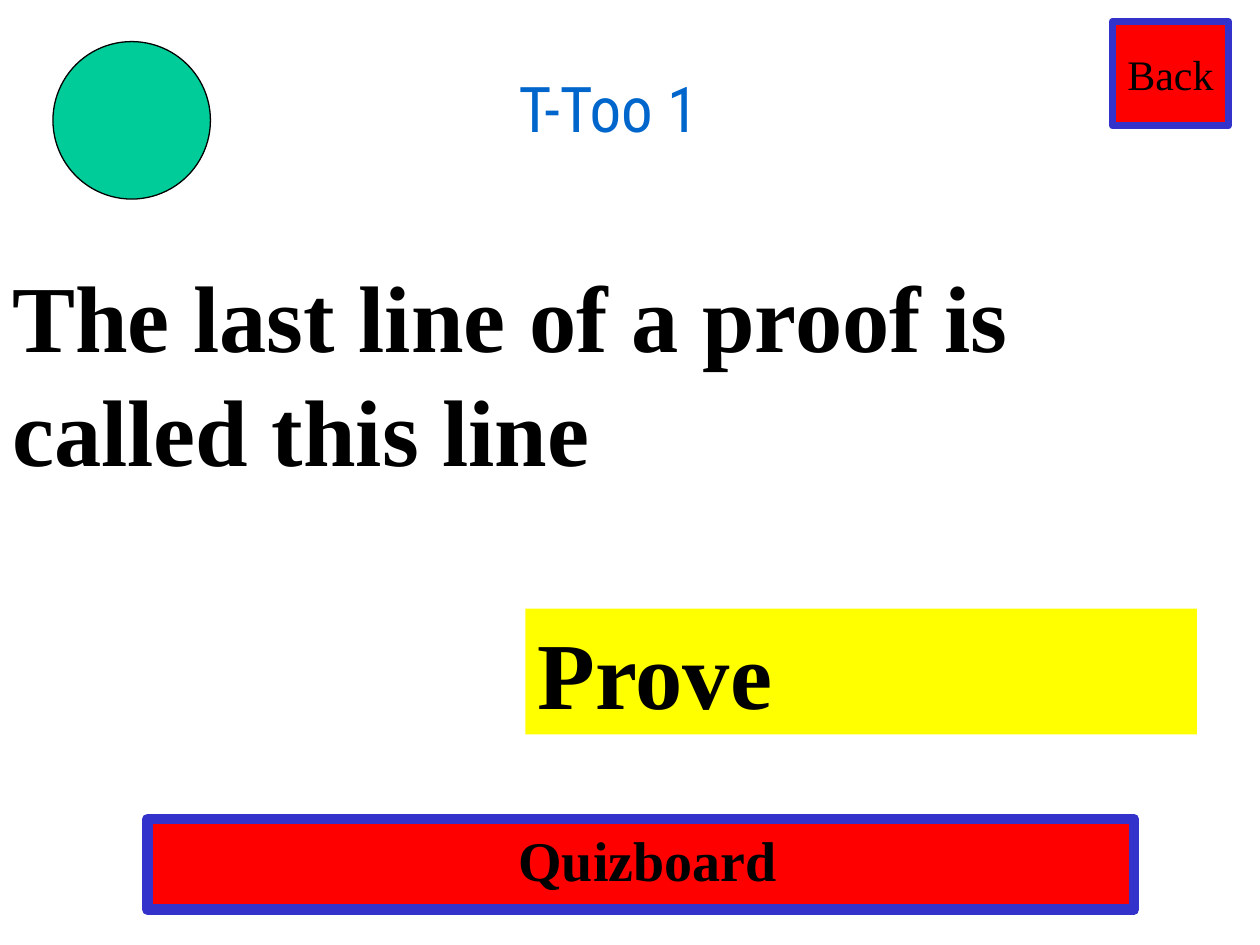
"""Build a quiz question slide with an answer bar and navigation buttons."""
from lxml.etree import SubElement
from pptx import Presentation
from pptx.dml.color import RGBColor
from pptx.enum.shapes import MSO_SHAPE
from pptx.enum.text import MSO_ANCHOR, MSO_AUTO_SIZE, PP_ALIGN
from pptx.oxml.ns import qn
from pptx.util import Inches, Pt

COLORS = {
    "red": "FF0000", "blue": "3333CC", "title": "0066CC",
    "yellow": "FFFF00", "green": "00CC99", "black": "000000",
}
SERIF = "Times New Roman"
CENTER = PP_ALIGN.CENTER
GROW = {"auto_size": MSO_AUTO_SIZE.SHAPE_TO_FIT_TEXT}
NO_WRAP = {"word_wrap": False}
MIDDLE = {"vertical_anchor": MSO_ANCHOR.MIDDLE}
HEADLINE = {"name": SERIF, "size": Pt(54), "bold": True}

ITEMS = [
    {"at": (1.17, 6.5, 7.83, 0.72), "shape": MSO_SHAPE.RECTANGLE,
     "fill": "red", "line": ("blue", 6), "text": " Quizboard", "align": CENTER,
     "before": 50, "frame": GROW,
     "font": {"name": SERIF, "size": Pt(32), "bold": True}},
    {"at": (2.33, 0.5, 5, 0.62), "text": "T-Too 1", "align": CENTER,
     "frame": NO_WRAP, "color": "title",
     "font": {"name": "Roboto Condensed", "size": Pt(36)}},
    {"at": (8.83, 0.17, 0.92, 0.83), "shape": MSO_SHAPE.RECTANGLE,
     "fill": "red", "line": ("blue", 4), "text": "Back", "align": CENTER,
     "frame": NO_WRAP | MIDDLE, "font": {"name": SERIF, "size": Pt(24)}},
    {"at": (0, 2, 8.25, 1.9),
     "text": "The last line of a proof is called this line",
     "frame": GROW, "font": HEADLINE},
    {"at": (4.17, 4.83, 5.33, 1), "shape": MSO_SHAPE.RECTANGLE,
     "fill": "yellow", "text": "Prove", "before": 50,
     "frame": GROW, "font": HEADLINE},
    {"at": (0.42, 0.33, 1.25, 1.25), "shape": MSO_SHAPE.OVAL,
     "fill": "green", "line": ("black", 0.75)},
]


def color(name):
    return RGBColor.from_string(COLORS[name])


def set_attributes(target, values):
    for name, value in values.items():
        setattr(target, name, value)


def add_shape(slide, item, box):
    shape = slide.shapes.add_shape(item["shape"], *box)
    shape.shadow.inherit = False
    shape.fill.solid()
    shape.fill.fore_color.rgb = color(item["fill"])
    if "line" in item:
        line_color, width = item["line"]
        shape.line.color.rgb = color(line_color)
        shape.line.width = Pt(width)
    else:
        shape.line.fill.background()
    return shape


def write_text(shape, item):
    frame = shape.text_frame
    set_attributes(frame, {"word_wrap": True, "vertical_anchor": MSO_ANCHOR.TOP}
                   | item["frame"])
    paragraph = frame.paragraphs[0]
    paragraph.alignment = item.get("align", PP_ALIGN.LEFT)
    if "before" in item:
        properties = paragraph._p.get_or_add_pPr()
        spacing = SubElement(properties, qn("a:spcBef"))
        SubElement(spacing, qn("a:spcPct"), val=str(item["before"] * 1000))
    run = paragraph.add_run()
    run.text = item["text"]
    set_attributes(run.font, item["font"])
    run.font.color.rgb = color(item.get("color", "black"))


def main():
    presentation = Presentation()
    presentation.slide_width = Inches(10)
    presentation.slide_height = Inches(7.5)
    slide = presentation.slides.add_slide(presentation.slide_layouts[6])
    for item in ITEMS:
        box = [Inches(length) for length in item["at"]]
        if "shape" in item:
            shape = add_shape(slide, item, box)
        else:
            shape = slide.shapes.add_textbox(*box)
        if "text" in item:
            write_text(shape, item)
    presentation.save("out.pptx")


if __name__ == "__main__":
    main()
